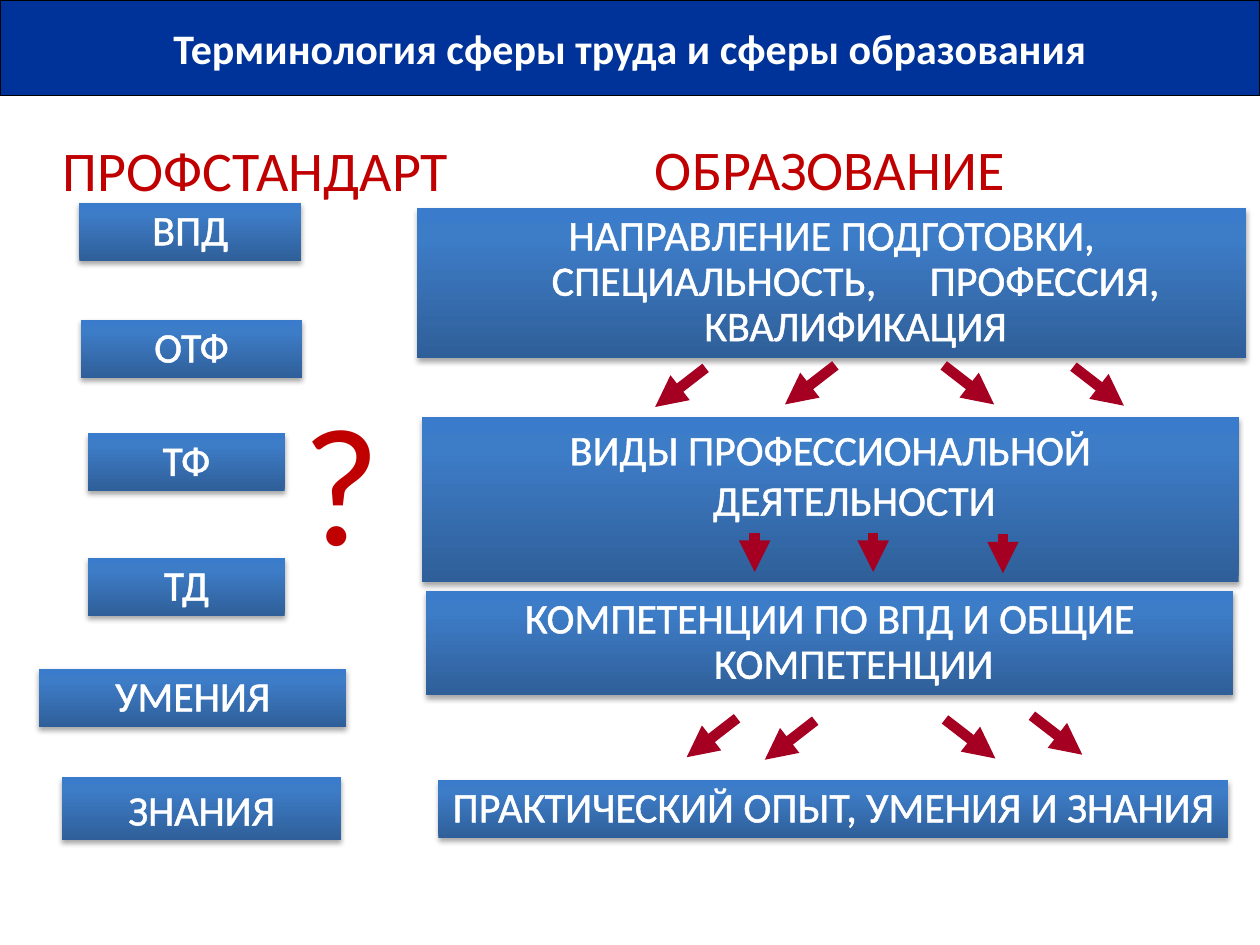
"""Build a slide comparing the terms of the labour and education spheres."""
import pptx
import pptx.dml.color
import pptx.enum.shapes
import pptx.enum.text
import pptx.oxml
import pptx.oxml.ns
import pptx.util

RGB = pptx.dml.color.RGBColor
Inches, Pt = pptx.util.Inches, pptx.util.Pt
RECT = pptx.enum.shapes.MSO_SHAPE.RECTANGLE
STRAIGHT = pptx.enum.shapes.MSO_CONNECTOR.STRAIGHT
CENTER = pptx.enum.text.PP_ALIGN.CENTER
ANCHOR = pptx.enum.text.MSO_ANCHOR
NS = pptx.oxml.ns.nsdecls("a")

WHITE = RGB(0xFF, 0xFF, 0xFF)
BLACK = RGB(0x00, 0x00, 0x00)
NAVY = RGB(0x00, 0x33, 0x99)
RED = RGB(0xC0, 0x00, 0x00)
CRIMSON = RGB(0xA5, 0x00, 0x21)
BOX_STOPS = [(0, RGB(0x2F, 0x5F, 0x99)), (80, RGB(0x3D, 0x7C, 0xC7)), (100, RGB(0x3A, 0x7C, 0xCB))]

WIDTH, HEIGHT = 10, 7.5
TITLE = "Терминология сферы труда и сферы образования"
LABELS = [
    ("ОБРАЗОВАНИЕ", (5.1, 1.02, 3.64, 0.59), 32, False),
    ("ПРОФСТАНДАРТ", (0.4, 1.03, 3.95, 0.59), 32, False),
    ("?", (2.3, 2.95, 0.94, 1.56), 96, True),
]
EDUCATION = [
    ("НАПРАВЛЕНИЕ ПОДГОТОВКИ, СПЕЦИАЛЬНОСТЬ,\tПРОФЕССИЯ, КВАЛИФИКАЦИЯ", (3.31, 1.65, 6.58, 1.19), 0.9),
    ("ВИДЫ ПРОФЕССИОНАЛЬНОЙ ДЕЯТЕЛЬНОСТИ", (3.35, 3.31, 6.48, 1.31), 1.0),
    ("КОМПЕТЕНЦИИ ПО ВПД И ОБЩИЕ КОМПЕТЕНЦИИ", (3.38, 4.69, 6.41, 0.83), 0.9),
    ("ПРАКТИЧЕСКИЙ ОПЫТ, УМЕНИЯ И ЗНАНИЯ", (3.48, 6.19, 6.27, 0.46), 0.9),
]
STANDARD = [
    ("ВПД", (0.63, 1.61, 1.76, 0.46), 0.9),
    ("ОТФ", (0.64, 2.54, 1.76, 0.46), 0.9),
    ("ТФ", (0.7, 3.44, 1.56, 0.46), 0.9),
    ("ТД", (0.7, 4.43, 1.56, 0.46), 0.9),
    ("УМЕНИЯ", (0.31, 5.31, 2.44, 0.46), 0.9),
    ("ЗНАНИЯ", (0.49, 6.17, 2.22, 0.5), 1.0),
]
LEFT, DOWN, RIGHT = -0.4, 0, 0.4
ARROW_DROP = 0.31
ARROWS = [
    (5.6, 2.92, LEFT), (6.63, 2.9, LEFT), (8.52, 2.91, RIGHT), (7.49, 2.9, RIGHT),
    (6.93, 4.23, DOWN), (7.96, 4.24, DOWN), (5.99, 4.23, DOWN),
    (5.85, 5.7, LEFT), (6.47, 5.72, LEFT), (7.5, 5.71, RIGHT), (8.19, 5.68, RIGHT),
]
HANG, TAB = Inches(0.38), Inches(4)


def element(xml):
    tag, rest = xml.split(" ", 1) if " " in xml.split(">", 1)[0] else xml.split(">", 1)
    if " " in xml.split(">", 1)[0]:
        return pptx.oxml.parse_xml(f"{tag} {NS} {rest}")
    return pptx.oxml.parse_xml(f"{tag} {NS}>{rest}")


def write(sp, text, size, color, **paragraph):
    p = sp.text_frame.paragraphs[0]
    for name, value in paragraph.items():
        setattr(p, name, value)
    r = p.add_run()
    r.text = text
    for name, value in {"name": "Calibri", "size": Pt(size)}.items():
        setattr(r.font, name, value)
    r.font.color.rgb = color
    return p, r


def add_rect(slide, at):
    sp = slide.shapes.add_shape(RECT, *map(Inches, at))
    sp.shadow.inherit = False
    return sp


def add_box(slide, text, at, spacing):
    sp = add_rect(slide, at)
    sp.line.fill.background()
    spPr = sp._element.spPr
    stops = "".join(f'<a:gs pos="{pos * 1000}"><a:srgbClr val="{color}"/></a:gs>' for pos, color in BOX_STOPS)
    spPr.insert(2, element(
        f'<a:gradFill rotWithShape="1"><a:gsLst>{stops}</a:gsLst><a:lin ang="16200000" scaled="0"/></a:gradFill>'))
    spPr.find(pptx.oxml.ns.qn("a:effectLst")).append(element(
        f'<a:outerShdw blurRad="{Pt(3.1)}" dist="{Pt(1.8)}" dir="5400000" rotWithShape="0">'
        f'<a:srgbClr val="{BLACK}"><a:alpha val="35000"/></a:srgbClr></a:outerShdw>'))
    tf = sp.text_frame
    tf.word_wrap, tf.vertical_anchor = True, ANCHOR.TOP
    p, r = write(sp, text, 24, WHITE, alignment=CENTER, line_spacing=spacing)
    pPr = p._p.get_or_add_pPr()
    pPr.set("marL", str(HANG))
    pPr.set("indent", str(-HANG))
    if "\t" in text:
        pPr.append(element(f'<a:tabLst><a:tab pos="{TAB}" algn="l"/></a:tabLst>'))
    r._r.get_or_add_rPr().insert(0, element(
        f'<a:ln w="{Pt(1.45)}"><a:solidFill><a:srgbClr val="{WHITE}"/></a:solidFill></a:ln>'))


def add_arrow(slide, x, y, dx):
    c = slide.shapes.add_connector(STRAIGHT, *map(Inches, (x, y, x + dx, y + ARROW_DROP)))
    c.line.color.rgb, c.line.width = CRIMSON, Pt(6)
    c.line._get_or_add_ln().append(element('<a:tailEnd type="triangle"/>'))
    c._element.spPr.append(element("<a:effectLst></a:effectLst>"))


def add_label(slide, text, at, size, wrap):
    sp = slide.shapes.add_textbox(*map(Inches, at))
    sp.text_frame.word_wrap = wrap
    write(sp, text, size, RED)


def add_title(slide):
    sp = add_rect(slide, (0, 0, WIDTH, 0.76))
    sp.fill.solid()
    sp.fill.fore_color.rgb = NAVY
    sp.line.color.rgb, sp.line.width = BLACK, Pt(0.75)
    tf = sp.text_frame
    tf.word_wrap, tf.vertical_anchor = False, ANCHOR.MIDDLE
    _, r = write(sp, TITLE, 24, WHITE, alignment=CENTER)
    r.font.bold = True


def main():
    prs = pptx.Presentation()
    prs.slide_width, prs.slide_height = Inches(WIDTH), Inches(HEIGHT)
    slide = prs.slides.add_slide(prs.slide_layouts[6])
    for box in EDUCATION + STANDARD:
        add_box(slide, *box)
    for arrow in ARROWS:
        add_arrow(slide, *arrow)
    for label in LABELS:
        add_label(slide, *label)
    add_title(slide)
    prs.save("out.pptx")


if __name__ == "__main__":
    main()
